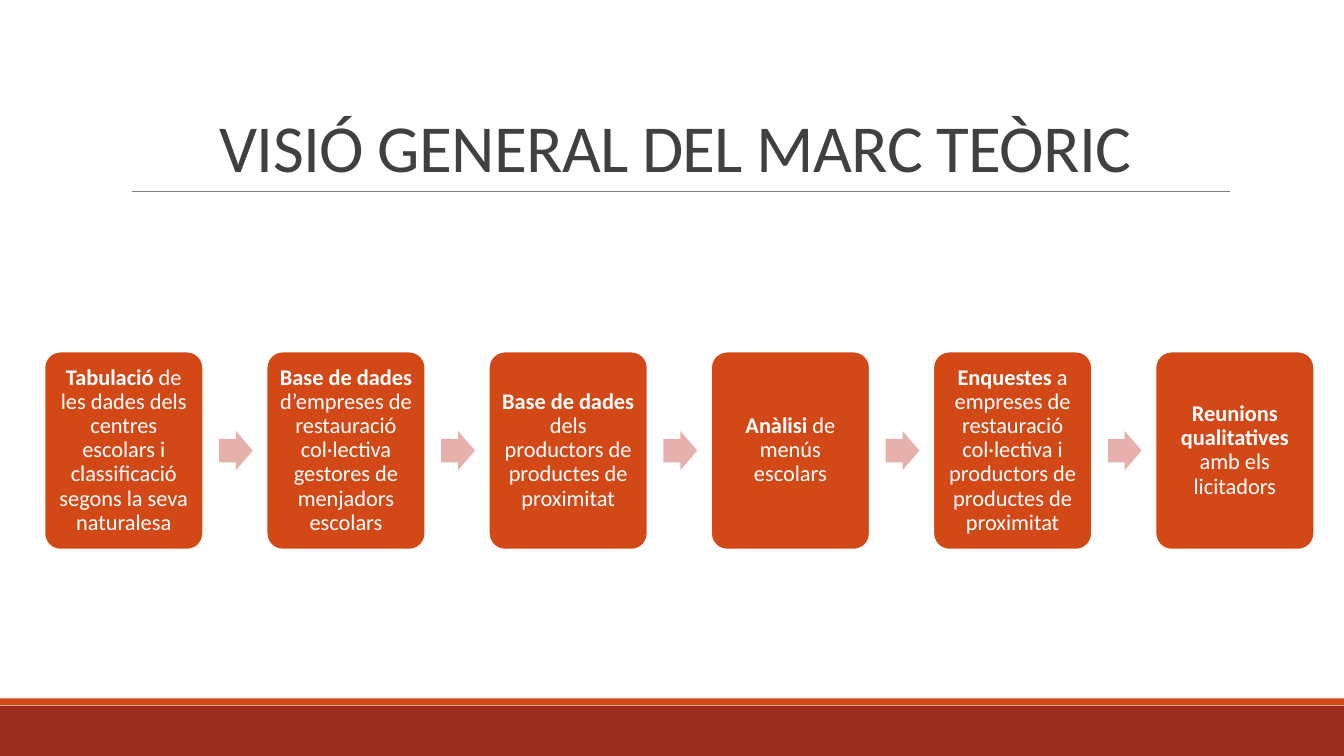
import pptx
import pptx.util
import pptx.dml.color
import pptx.enum.shapes
import pptx.enum.text
import pptx.oxml

Cm, Pt = pptx.util.Cm, pptx.util.Pt
MSO = pptx.enum.shapes.MSO_SHAPE
ANCHOR = pptx.enum.text.MSO_ANCHOR
CENTER = pptx.enum.text.PP_ALIGN.CENTER

COLORS = {"orange": "D34817", "brick": "9B2D1F", "pink": "E6B1AC",
          "title": "404040", "rule": "808080", "white": "FFFFFF"}
STEPS = [
    ("Tabulació", " de les dades dels centres escolars i classificació segons la seva naturalesa"),
    ("Base de dades ", "d’empreses de restauració col·lectiva gestores de menjadors escolars"),
    ("Base de dades ", "dels productors de productes de proximitat"),
    ("Anàlisi", " de menús escolars"),
    ("Enquestes", " a empreses de restauració col·lectiva i productors de productes de proximitat"),
    ("Reunions qualitatives ", "amb els licitadors"),
]


def rgb(name):
    return pptx.dml.color.RGBColor.from_string(COLORS[name])


def add_filled(kind, left, top, width, height, color):
    sp = s.shapes.add_shape(kind, Cm(left), Cm(top), Cm(width), Cm(height))
    sp.shadow.inherit = False
    sp.fill.solid()
    sp.fill.fore_color.rgb = rgb(color)
    sp.line.fill.background()
    return sp


prs = pptx.Presentation()
prs.slide_width, prs.slide_height = Cm(33.87), Cm(19.05)
s = prs.slides.add_slide(prs.slide_layouts[5])

# Footer bands
add_filled(MSO.RECTANGLE, 0, 17.78, 33.87, 1.27, "brick")
add_filled(MSO.RECTANGLE, 0, 17.6, 33.87, 0.17, "orange")

# Title
title = s.shapes.title
title.left, title.top, title.width, title.height = Cm(3.05), Cm(0.79), Cm(27.94), Cm(4.04)
tf = title.text_frame
tf.text = "VISIÓ GENERAL DEL MARC TEÒRIC"
tf.word_wrap = True
tf.auto_size = pptx.enum.text.MSO_AUTO_SIZE.NONE
tf.vertical_anchor = ANCHOR.BOTTOM
p = tf.paragraphs[0]
p.alignment = CENTER
p.line_spacing = 0.85
p.font.name, p.font.size = "Calibri", Pt(48)
p.font.color.rgb = rgb("title")
p.runs[0]._r.get_or_add_rPr().set("spc", "-50")

# Rule under the title
rule = s.shapes.add_connector(pptx.enum.shapes.MSO_CONNECTOR.STRAIGHT,
                              Cm(3.32), Cm(4.83), Cm(31), Cm(4.83))
rule.line.color.rgb = rgb("rule")
rule.line.width = Pt(0.5)
rule._element.spPr.append(pptx.oxml.parse_xml(
    '<a:effectLst xmlns:a="http://schemas.openxmlformats.org/drawingml/2006/main"/>'))

# Process steps with an arrow between neighbours
LEFT, PITCH = 1.12, 5.6
for i, (lead, rest) in enumerate(STEPS):
    x = LEFT + i * PITCH
    box = add_filled(MSO.ROUNDED_RECTANGLE, x, 8.86, 4, 4.99, "orange")
    box.adjustments[0] = 0.1
    box.line.color.rgb = rgb("white")
    box.line.width = Pt(1.25)
    tf = box.text_frame
    tf.word_wrap = True
    tf.vertical_anchor = ANCHOR.MIDDLE
    tf.margin_left = tf.margin_right = tf.margin_top = tf.margin_bottom = Cm(0.17)
    p = tf.paragraphs[0]
    p.alignment = CENTER
    p.line_spacing = 0.9
    p.font.name, p.font.size = "Calibri", Pt(16)
    p.font.color.rgb = rgb("white")
    for text, bold in ((lead, True), (rest, False)):
        r = p.add_run()
        r.text = text
        r.font.bold = bold
    if i < len(STEPS) - 1:
        arrow = add_filled(MSO.RIGHT_ARROW, x + 4.4, 10.86, 0.85, 0.99, "pink")
        arrow.adjustments[0] = 0.6

prs.save("out.pptx")
